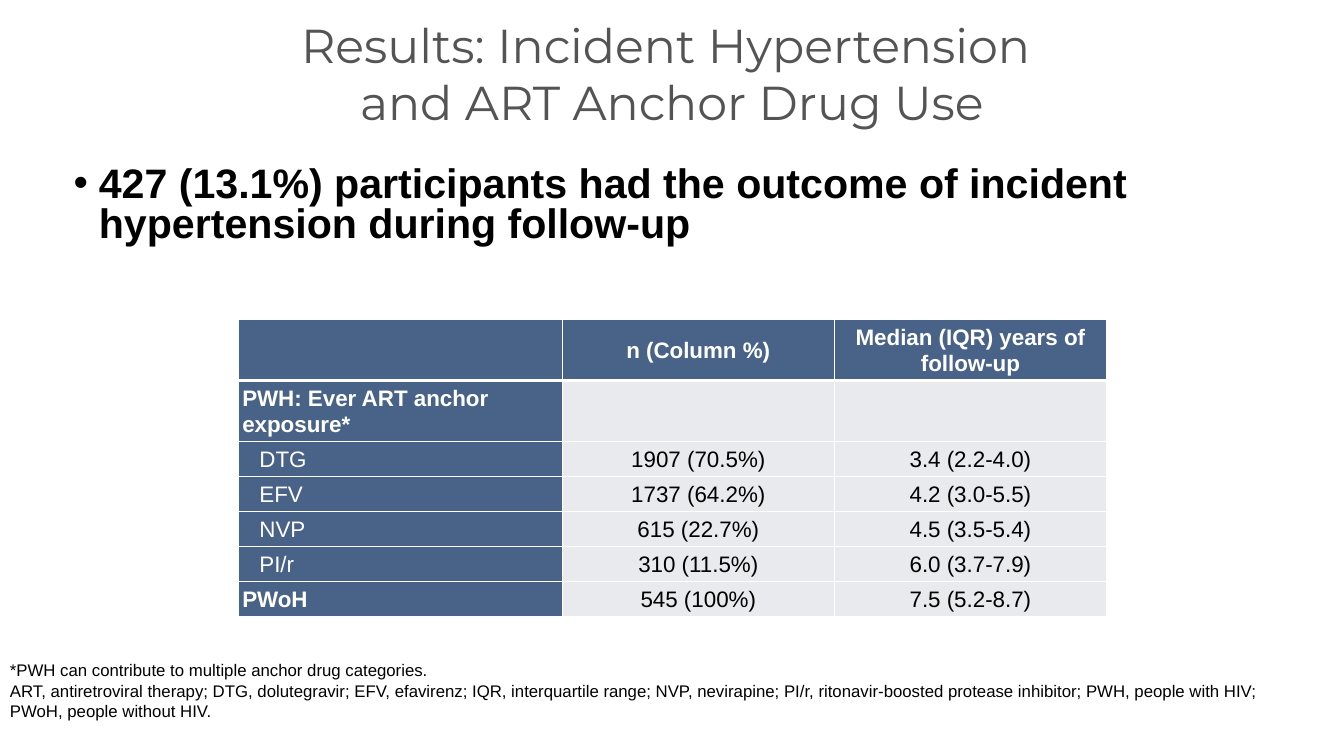
from lxml import etree
from pptx import Presentation
from pptx.dml.color import RGBColor
from pptx.enum import text
from pptx.oxml import ns
from pptx.util import Pt

TITLE = ["Results: Incident Hypertension ", "and ART Anchor Drug Use"]
FINDING = ["427 (13.1%) participants had the outcome of incident hypertension during follow-up"]
FOOTNOTE = [
    "*PWH can contribute to multiple anchor drug categories.",
    "ART, antiretroviral therapy; DTG, dolutegravir; EFV, efavirenz; IQR, interquartile range; "
    "NVP, nevirapine; PI/r, ritonavir-boosted protease inhibitor; PWH, people with HIV; "
    "PWoH, people without HIV.",
]
ROWS = [
    ("", "n (Column %)", "Median (IQR) years of follow-up"),
    ("PWH: Ever ART anchor exposure*", "", ""),
    ("DTG", "1907 (70.5%)", "3.4 (2.2-4.0)"),
    ("EFV", "1737 (64.2%)", "4.2 (3.0-5.5)"),
    ("NVP", "615 (22.7%)", "4.5 (3.5-5.4)"),
    ("PI/r", "310 (11.5%)", "6.0 (3.7-7.9)"),
    ("PWoH", "545 (100%)", "7.5 (5.2-8.7)"),
]
DRUGS = ("DTG", "EFV", "NVP", "PI/r")
COLUMN_WIDTHS = (231.4, 194.4, 194.4)
ROW_HEIGHTS = (43.6, 43.6) + (25,) * 5
BLUE, GREY, WHITE, BLACK = "496388", "E9EAED", "FFFFFF", "000000"


def colour(value):
    return RGBColor.from_string(value)


def place(box, left, top, width, height):
    box.left, box.top, box.width, box.height = Pt(left), Pt(top), Pt(width), Pt(height)


def write(para, lines, size, ink, bold=False, face="Arial"):
    for index, line in enumerate(lines):
        if index:
            para.add_line_break()
        span = para.add_run()
        span.text = line
        span.font.size = Pt(size)
        span.font.name = face
        span.font.bold = bold
        span.font.color.rgb = colour(ink)


def add_borders(cell, bottom):
    properties = cell._tc.get_or_add_tcPr()
    for side, width in (("L", 1), ("R", 1), ("T", 1), ("B", bottom)):
        line = etree.SubElement(properties, ns.qn("a:ln" + side), w=str(Pt(width)))
        fill = etree.SubElement(line, ns.qn("a:solidFill"))
        etree.SubElement(fill, ns.qn("a:srgbClr"), val=WHITE)


def fill_cell(cell, row, column, label):
    header, stub = row == 0, column == 0
    add_borders(cell, 3 if header else 1)
    cell.fill.solid()
    cell.fill.fore_color.rgb = colour(BLUE if header or stub else GREY)
    cell.vertical_anchor = text.MSO_ANCHOR.MIDDLE
    cell.margin_top = cell.margin_bottom = Pt(2.88)
    cell.margin_right = Pt(8.64)
    cell.margin_left = Pt(15.12 if label in DRUGS else 2.88 if stub else 8.64)
    para = cell.text_frame.paragraphs[0]
    para.line_spacing = 1.07
    para.alignment = text.PP_ALIGN.LEFT if stub else text.PP_ALIGN.CENTER
    if label:
        bold = header or (stub and label not in DRUGS)
        write(para, [label], 16, WHITE if header or stub else BLACK, bold)


def main():
    deck = Presentation()
    deck.slide_width, deck.slide_height = Pt(960), Pt(540)
    page = deck.slides.add_slide(deck.slide_layouts[1])

    title = page.shapes.title
    place(title, 66, 0, 828, 104.4)
    title.text_frame.auto_size = text.MSO_AUTO_SIZE.NONE
    title.text_frame.vertical_anchor = text.MSO_ANCHOR.MIDDLE
    para = title.text_frame.paragraphs[0]
    para.alignment = text.PP_ALIGN.CENTER
    write(para, TITLE, 34, "545454", face="Montserrat")

    frame = page.shapes.add_table(
        len(ROWS), len(COLUMN_WIDTHS), Pt(170.2), Pt(228),
        Pt(sum(COLUMN_WIDTHS)), Pt(sum(ROW_HEIGHTS)))
    table = frame.table
    table.first_row = table.horz_banding = False
    for column, width in zip(table.columns, COLUMN_WIDTHS):
        column.width = Pt(width)
    for row, height in zip(table.rows, ROW_HEIGHTS):
        row.height = Pt(height)
    for row, labels in enumerate(ROWS):
        for column, label in enumerate(labels):
            fill_cell(table.cell(row, column), row, column, label)

    footnote = page.shapes.add_textbox(0, Pt(468), Pt(941.8), Pt(51))
    footnote.text_frame.word_wrap = True
    write(footnote.text_frame.paragraphs[0], FOOTNOTE, 12, BLACK)

    finding = page.placeholders[1]
    place(finding, 45.4, 115.9, 903.6, 64.8)
    finding.text_frame.auto_size = text.MSO_AUTO_SIZE.NONE
    para = finding.text_frame.paragraphs[0]
    properties = para._p.get_or_add_pPr()
    properties.set("marL", str(Pt(18)))
    properties.set("indent", str(Pt(-18)))
    etree.SubElement(properties, ns.qn("a:buChar"), char="•")
    para.line_spacing = 0.8
    para.space_before = Pt(0)
    write(para, FINDING, 29.4, BLACK, True)

    deck.save("out.pptx")


if __name__ == "__main__":
    main()
